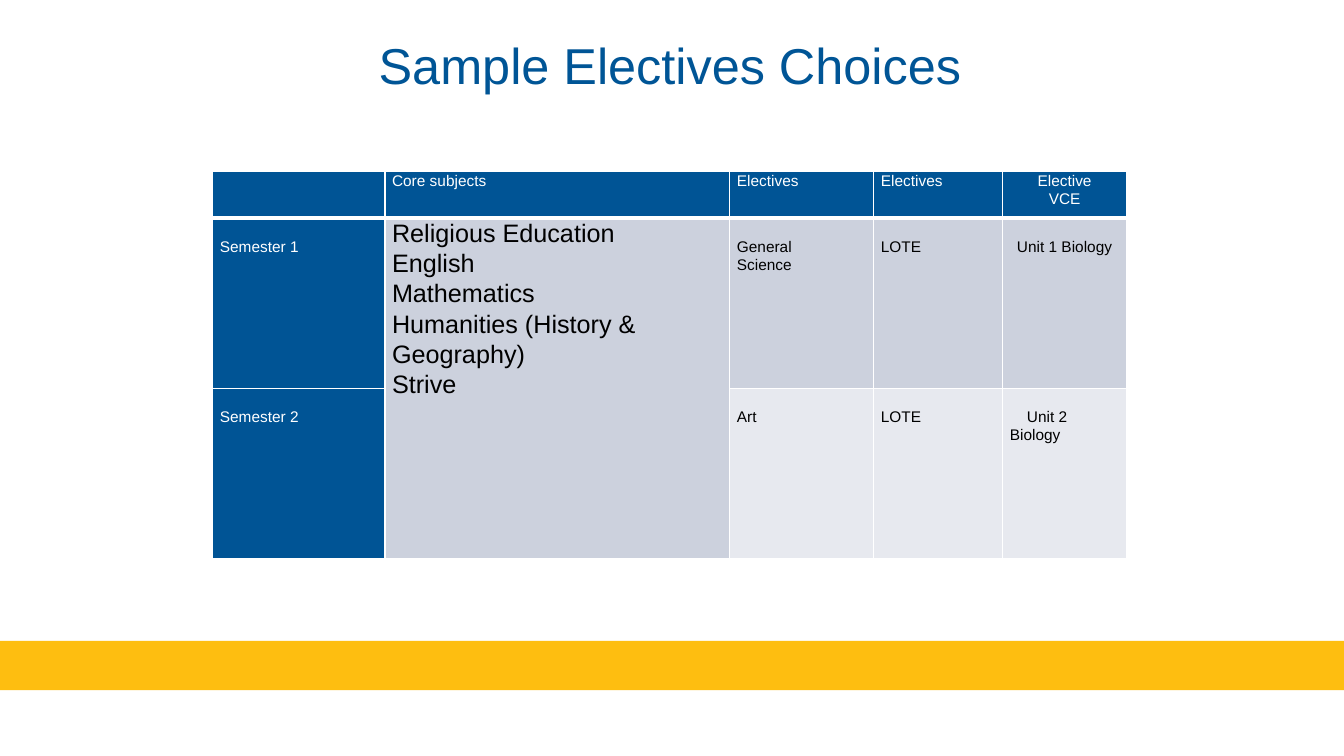
from lxml import etree
from pptx import Presentation
from pptx import util as u
from pptx.dml.color import RGBColor
from pptx.enum import shapes, text
from pptx.oxml import ns

BLUE, GOLD, WHITE, BLACK = "005495", "FEBE10", "FFFFFF", "000000"
MID, PALE = "CCD1DD", "E7E9EF"
COLUMN_WIDTHS = [4.34, 8.69, 3.63, 3.25, 3.12]
ROW_HEIGHTS = [1.17, 4.29, 4.29]
CORE_SUBJECTS = [
    "Religious Education",
    "English",
    "Mathematics",
    "Humanities (History & Geography)",
    "Strive",
]
ROWS = [
    [[], ["Core subjects"], ["Electives"], ["Electives"], ["Elective", "VCE"]],
    [["Semester 1"], CORE_SUBJECTS, ["General", "Science"], ["LOTE"], ["Unit 1 Biology"]],
    [["Semester 2"], [], ["Art"], ["LOTE"], ["Unit 2\vBiology"]],
]
LEFT, CENTER = text.PP_ALIGN.LEFT, text.PP_ALIGN.CENTER


def colour(value):
    return RGBColor.from_string(value)


def paint(target, value):
    target.fill.solid()
    target.fill.fore_color.rgb = colour(value)


def write(frame, lines, size, value, align=LEFT, spacing=1.0):
    frame.word_wrap = True
    for index, line in enumerate(lines):
        para = frame.paragraphs[0] if index == 0 else frame.add_paragraph()
        para.text = line
        para.alignment = align
        para.line_spacing = spacing
        para.font.name = "Arial"
        para.font.size = u.Pt(size)
        para.font.bold = False
        para.font.color.rgb = colour(value)


def add_bar(page):
    bar = page.shapes.add_shape(
        shapes.MSO_SHAPE.RECTANGLE, 0, u.Cm(16.15), u.Cm(33.87), u.Cm(1.24)
    )
    bar.shadow.inherit = False
    bar.line.fill.background()
    paint(bar, GOLD)


def add_title(page, title):
    box = page.shapes.add_textbox(u.Cm(8.48), u.Cm(0.74), u.Cm(16.81), u.Cm(1.8))
    write(box.text_frame, [title], 36, "005596", CENTER)


def set_borders(cell, top, bottom):
    properties = cell._tc.get_or_add_tcPr()
    for side, width in (("L", 1), ("R", 1), ("T", top), ("B", bottom)):
        line = etree.SubElement(properties, ns.qn(f"a:ln{side}"), w=str(u.Pt(width)))
        fill = etree.SubElement(line, ns.qn("a:solidFill"))
        etree.SubElement(fill, ns.qn("a:srgbClr"), val=WHITE)


def fill_cell(cell, row, column, lines):
    heading = row == 0 or column == 0
    core = row > 0 and column == 1
    centred = column == 4 and row < 2
    set_borders(cell, 3 if row == 1 else 1, 3 if row == 0 else 1)
    paint(cell, BLUE if heading else MID if row == 1 or core else PALE)
    cell.margin_left = cell.margin_right = u.Cm(0.18)
    cell.margin_top = u.Cm(0 if row == 0 or core else 0.48)
    cell.margin_bottom = 0
    write(
        cell.text_frame,
        lines,
        18 if core else 11,
        WHITE if heading else BLACK,
        CENTER if centred else LEFT,
        1.07,
    )


def add_electives(page):
    frame = page.shapes.add_table(
        len(ROWS),
        len(COLUMN_WIDTHS),
        u.Cm(5.36),
        u.Cm(4.32),
        u.Cm(sum(COLUMN_WIDTHS)),
        u.Cm(sum(ROW_HEIGHTS)),
    )
    table = frame.table
    table.first_row = table.horz_banding = False
    for column, width in zip(table.columns, COLUMN_WIDTHS):
        column.width = u.Cm(width)
    for row, height in zip(table.rows, ROW_HEIGHTS):
        row.height = u.Cm(height)
    for row, contents in enumerate(ROWS):
        for column, lines in enumerate(contents):
            fill_cell(table.cell(row, column), row, column, lines)
    table.cell(1, 1).merge(table.cell(2, 1))
    biology = table.cell(2, 4).text_frame.paragraphs[0]
    biology._p.get_or_add_pPr().set("indent", str(u.Cm(0.43)))


def main():
    deck = Presentation()
    deck.slide_width, deck.slide_height = u.Cm(33.87), u.Cm(19.05)
    page = deck.slides.add_slide(deck.slide_layouts[6])
    add_bar(page)
    add_title(page, "Sample Electives Choices")
    add_electives(page)
    deck.save("out.pptx")


if __name__ == "__main__":
    main()
